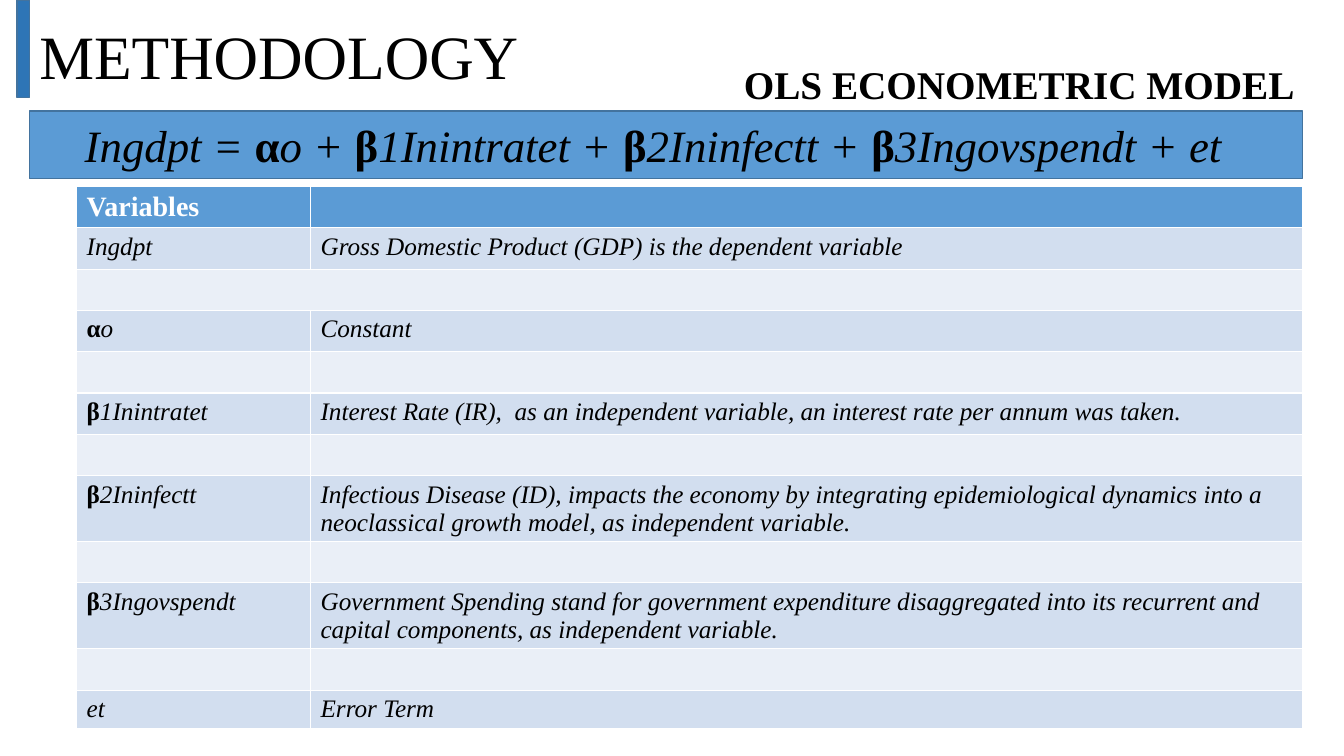
from pptx import Presentation
from pptx.dml.color import RGBColor
from pptx.enum.shapes import MSO_SHAPE
from pptx.enum.text import MSO_ANCHOR, PP_ALIGN
from pptx.util import Inches, Pt

BLACK = RGBColor(0x00, 0x00, 0x00)
WHITE = RGBColor(0xFF, 0xFF, 0xFF)
BLUE = RGBColor(0x5B, 0x9B, 0xD5)
DARK_BLUE = RGBColor(0x2E, 0x75, 0xB6)
OUTLINE = RGBColor(0x43, 0x73, 0x9E)
BAND_DARK = RGBColor(0xD2, 0xDE, 0xEF)
BAND_LIGHT = RGBColor(0xEA, 0xEF, 0xF7)


def add_run(p, text, size, color=BLACK, bold=False, italic=False):
    r = p.add_run()
    r.text = text
    r.font.name = "Times New Roman"
    r.font.size = Pt(size)
    r.font.color.rgb = color
    r.font.bold = bold
    r.font.italic = italic


def add_formula(p, text, size):
    """Add italic text in which the Greek letters are bold and upright."""
    for part in text.replace("α", "|α|").replace("β", "|β|").split("|"):
        if part:
            greek = part in "αβ"
            add_run(p, part, size, bold=greek, italic=not greek)


prs = Presentation()
prs.slide_width = Inches(13.33)
prs.slide_height = Inches(7.5)
s = prs.slides.add_slide(prs.slide_layouts[5])

# Title
title = s.shapes.title
title.left, title.top = Inches(0.29), Inches(0.05)
title.width, title.height = Inches(11.5), Inches(1.09)
tf = title.text_frame
tf.vertical_anchor = MSO_ANCHOR.MIDDLE
p = tf.paragraphs[0]
p.alignment = PP_ALIGN.LEFT
p.line_spacing = 0.9
add_run(p, "METHODOLOGY", 44)

# Variables table: a blank row separates the variables
variables = [
    ("Ingdpt", "Gross Domestic Product (GDP) is the dependent variable"),
    ("αo", "Constant"),
    ("β1Inintratet", "Interest Rate (IR),  as an independent variable, "
                     "an interest rate per annum was taken."),
    ("β2Ininfectt", "Infectious Disease (ID), impacts the economy by integrating "
                    "epidemiological dynamics into a neoclassical growth model, "
                    "as independent variable."),
    ("β3Ingovspendt", "Government Spending stand for government expenditure "
                      "disaggregated into its recurrent and capital components, "
                      "as independent variable."),
    ("et", "Error Term"),
]
row_count = 2 * len(variables)
table = s.shapes.add_table(row_count, 2, Inches(0.76), Inches(1.85),
                           Inches(12.16), Inches(5.32)).table
table.columns[0].width = Inches(2.32)
table.columns[1].width = Inches(9.84)
for i, row in enumerate(table.rows):
    row.height = Inches(0.37 if i == row_count - 1 else 0.41)
    for cell in row.cells:
        cell.fill.solid()
        cell.fill.fore_color.rgb = BLUE if i == 0 else BAND_DARK if i % 2 else BAND_LIGHT
add_run(table.cell(0, 0).text_frame.paragraphs[0], "Variables", 20, WHITE, bold=True)
for i, texts in enumerate(variables):
    for col, text in enumerate(texts):
        add_formula(table.cell(2 * i + 1, col).text_frame.paragraphs[0], text, 18)
table.cell(2, 0).merge(table.cell(2, 1))

# Accent bar
bar = s.shapes.add_shape(MSO_SHAPE.RECTANGLE, Inches(0.17), 0, Inches(0.12), Inches(0.97))

# Subtitle
subtitle = s.shapes.add_textbox(Inches(7.28), Inches(0.55), Inches(5.89), Inches(0.57))
subtitle.text_frame.word_wrap = True
add_run(subtitle.text_frame.paragraphs[0], "OLS ECONOMETRIC MODEL", 28, bold=True)

# Equation banner
banner = s.shapes.add_shape(MSO_SHAPE.RECTANGLE, Inches(0.29), Inches(1.1),
                            Inches(12.63), Inches(0.67))
tf = banner.text_frame
tf.margin_left = Inches(0.55)
tf.vertical_anchor = MSO_ANCHOR.MIDDLE
p = tf.paragraphs[0]
p.alignment = PP_ALIGN.LEFT
add_formula(p, "Ingdpt = αo + β1Inintratet + β2Ininfectt + β3Ingovspendt + et", 32)

for sp, color in ((bar, DARK_BLUE), (banner, BLUE)):
    sp.shadow.inherit = False
    sp.fill.solid()
    sp.fill.fore_color.rgb = color
    sp.line.color.rgb = OUTLINE
    sp.line.width = Pt(1)

prs.save("out.pptx")
